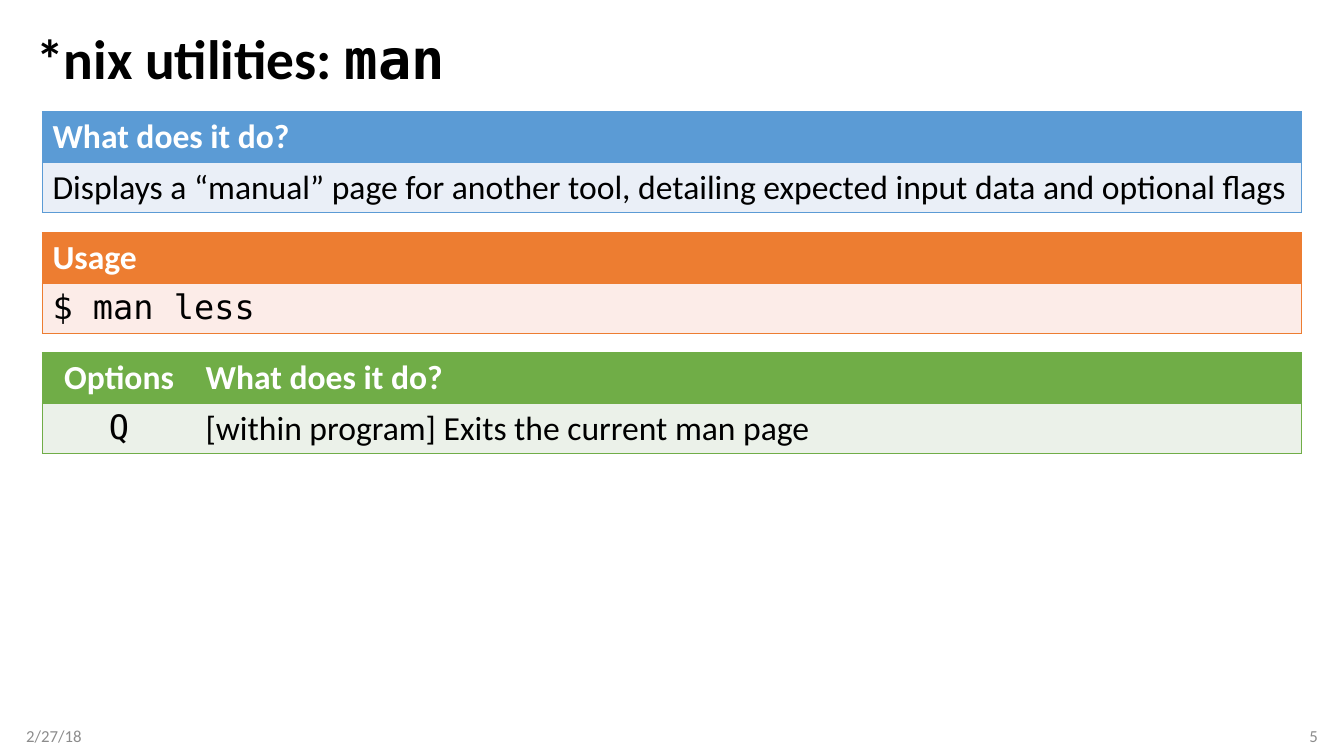
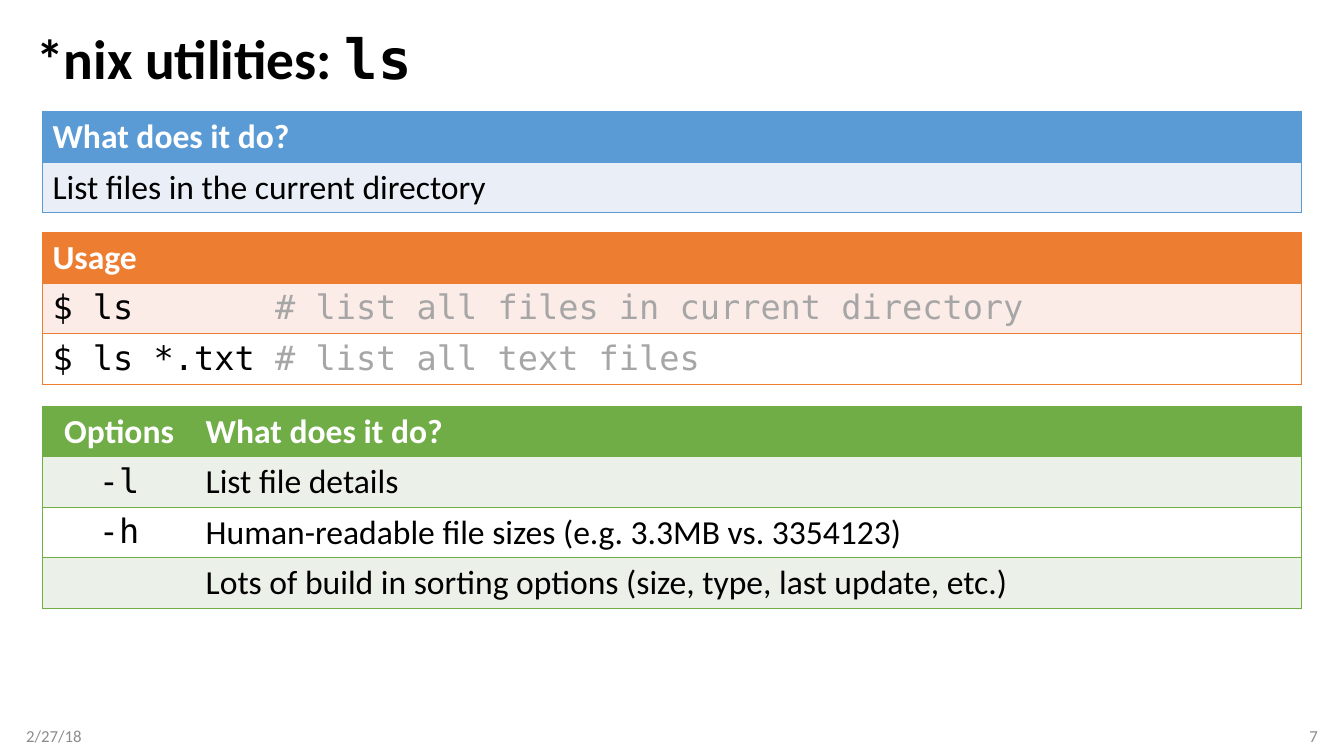
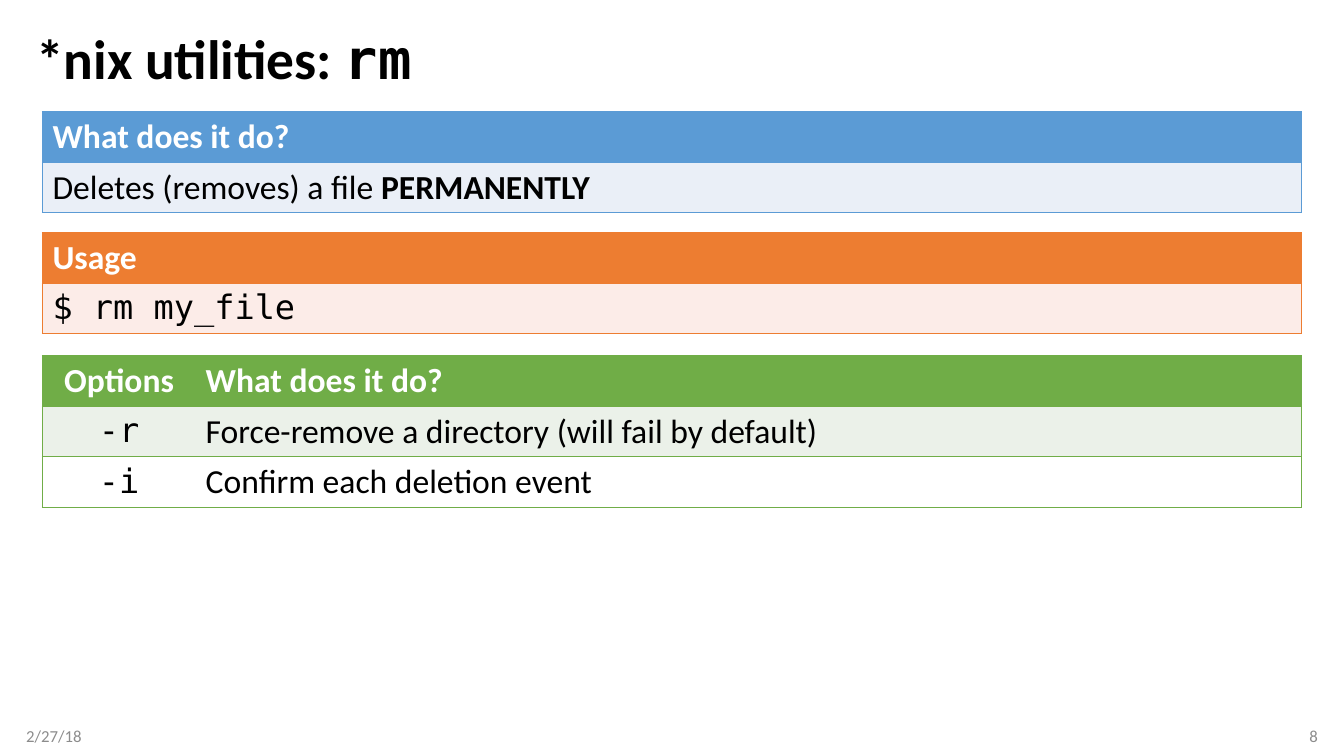
"""Build three slides that describe the *nix utilities man, ls and rm."""
from collections import namedtuple

from pptx import Presentation
from pptx.dml.color import RGBColor
from pptx.enum import text as t
from pptx.oxml import ns, xmlchemy
from pptx.util import Cm, Pt

BLACK = RGBColor(0x00, 0x00, 0x00)
WHITE = RGBColor(0xFF, 0xFF, 0xFF)
COMMENT_GRAY = RGBColor(0xA6, 0xA6, 0xA6)
FOOTER_GRAY = RGBColor(0x8C, 0x8C, 0x8C)
BLUE = RGBColor(0x5B, 0x9B, 0xD5)
BLUE_TINT = RGBColor(0xEA, 0xEF, 0xF7)
ORANGE = RGBColor(0xED, 0x7D, 0x31)
ORANGE_TINT = RGBColor(0xFC, 0xEC, 0xE8)
GREEN = RGBColor(0x70, 0xAD, 0x47)
GREEN_TINT = RGBColor(0xEB, 0xF1, 0xE9)

SANS = "Calibri"
MONO = "DejaVu Sans Mono"
DATE = "2/27/18"

SLIDE_WIDTH, SLIDE_HEIGHT = Cm(33.87), Cm(19.05)
EDGE = Cm(0.66)
TABLE_LEFT, TABLE_WIDTH = Cm(1.07), Cm(31.72)
OPTION_WIDTH = Cm(3.86)
ROW_HEIGHT = Cm(1.04)
PURPOSE_TOP, USAGE_TOP = Cm(2.82), Cm(5.87)
COMMENT_TAB = Cm(5.61)

Span = namedtuple("Span", "text bold color", defaults=(None, None))
Theme = namedtuple("Theme", "accent tint")
Utility = namedtuple("Utility", "number name purpose usage options options_top")

PURPOSE_THEME = Theme(BLUE, BLUE_TINT)
USAGE_THEME = Theme(ORANGE, ORANGE_TINT)
OPTIONS_THEME = Theme(GREEN, GREEN_TINT)

UTILITIES = [
    Utility(
        5, "man",
        [Span("Displays a “manual” page for another tool, "
              "detailing expected input data and optional flags")],
        [[Span("$ man less")]],
        [("Q", "[within program] Exits the current man page")],
        Cm(8.89),
    ),
    Utility(
        7, "ls",
        [Span("List files in the current directory")],
        [
            [Span("$ ls\t"),
             Span("# list all files in current directory", color=COMMENT_GRAY)],
            [Span("$ ls *.txt\t"),
             Span("# list all text files", color=COMMENT_GRAY)],
        ],
        [
            ("-l", "List file details"),
            ("-h", "Human-readable file sizes (e.g. 3.3MB vs. 3354123)"),
            ("", "Lots of build in sorting options (size, type, last update, etc.)"),
        ],
        Cm(10.24),
    ),
    Utility(
        8, "rm",
        [Span("Deletes (removes) a file "), Span("PERMANENTLY", bold=True)],
        [[Span("$ rm my_file")]],
        [
            ("-r", "Force-remove a directory (will fail by default)"),
            ("-i", "Confirm each deletion event"),
        ],
        Cm(8.97),
    ),
]


def set_font(font, size, color, name=SANS, bold=False):
    """Set every font property that the slides use."""
    font.size, font.name, font.bold = Pt(size), name, bold
    font.color.rgb = color


def add_child(parent, tag, **attributes):
    """Append a DrawingML element and return it."""
    child = xmlchemy.OxmlElement(tag)
    for key, value in attributes.items():
        child.set(key, str(value))
    parent.append(child)
    return child


def add_title(slide, name):
    """Fill the title, with the utility's name in the code font."""
    title = slide.shapes.title
    title.left, title.top = EDGE, Cm(0.64)
    title.width, title.height = SLIDE_WIDTH - 2 * EDGE, Cm(1.83)
    frame = title.text_frame
    frame.auto_size = t.MSO_AUTO_SIZE.NONE
    frame.vertical_anchor = t.MSO_ANCHOR.MIDDLE
    heading = frame.paragraphs[0]
    heading.alignment = t.PP_ALIGN.LEFT
    heading.line_spacing = 0.9
    set_font(heading.font, 39.6, BLACK, bold=True)
    heading.add_run().text = "*nix utilities: "
    command = heading.add_run()
    command.text = name
    command.font.name = MONO


def add_footer(slide, wording, left, alignment):
    """Add one footer text at the bottom of the slide."""
    footer = slide.shapes.add_textbox(left, Cm(18.03), Cm(7.62), Cm(1.02))
    frame = footer.text_frame
    frame.word_wrap = True
    frame.vertical_anchor = t.MSO_ANCHOR.MIDDLE
    if alignment == t.PP_ALIGN.LEFT:
        frame.margin_left = 0
    else:
        frame.margin_right = 0
    line = frame.paragraphs[0]
    line.text = wording
    line.alignment = alignment
    set_font(line.font, 12, FOOTER_GRAY)


def set_borders(cell, color, sides):
    """Draw the named sides of a cell and clear the others."""
    properties = cell._tc.get_or_add_tcPr()
    for side in "LRTB":
        border = add_child(properties, f"a:ln{side}", w=Pt(1))
        if side in sides:
            add_child(add_child(border, "a:solidFill"), "a:srgbClr", val=color)
        else:
            add_child(border, "a:noFill")


def write_cell(cell, spans, color, name, bold, alignment):
    """Write spans into a cell, overriding the font only where they differ."""
    line = cell.text_frame.paragraphs[0]
    line.alignment = alignment
    set_font(line.font, 24, color, name, bold)
    for span in spans:
        run = line.add_run()
        run.text = span.text
        if span.bold is not None:
            run.font.bold = span.bold
        if span.color is not None:
            run.font.color.rgb = span.color
    if any("\t" in span.text for span in spans):
        stops = xmlchemy.OxmlElement("a:tabLst")
        add_child(stops, "a:tab", pos=COMMENT_TAB, algn="l")
        line._p.find(ns.qn("a:pPr")).insert(0, stops)


def add_panel(slide, top, theme, rows, widths, fonts, alignments):
    """Add a table with an accent header and banded rows of spans."""
    table = slide.shapes.add_table(
        len(rows), len(widths), TABLE_LEFT, top, TABLE_WIDTH, ROW_HEIGHT * len(rows)
    ).table
    table.horz_banding = False
    last = len(widths) - 1
    for column, width in enumerate(widths):
        table.columns[column].width = width
    for row, contents in enumerate(rows):
        header = row == 0
        fill = theme.accent if header else theme.tint if row % 2 else WHITE
        for column, spans in enumerate(contents):
            cell = table.cell(row, column)
            sides = "TB" + "L" * (column == 0) + "R" * (column == last)
            set_borders(cell, theme.accent, sides)
            cell.fill.solid()
            cell.fill.fore_color.rgb = fill
            write_cell(cell, spans, WHITE if header else BLACK,
                       SANS if header else fonts[column], header, alignments[column])


def add_utility_slide(deck, utility):
    """Add the slide for one utility: purpose, usage and options."""
    slide = deck.slides.add_slide(deck.slide_layouts[5])
    left, center = t.PP_ALIGN.LEFT, t.PP_ALIGN.CENTER
    add_title(slide, utility.name)
    add_footer(slide, DATE, EDGE, left)
    add_footer(slide, str(utility.number), SLIDE_WIDTH - EDGE - Cm(7.62),
               t.PP_ALIGN.RIGHT)

    purpose = [[[Span("What does it do?")]], [utility.purpose]]
    add_panel(slide, PURPOSE_TOP, PURPOSE_THEME, purpose, [TABLE_WIDTH], [SANS], [left])

    usage = [[[Span("Usage")]]] + [[command] for command in utility.usage]
    add_panel(slide, USAGE_TOP, USAGE_THEME, usage, [TABLE_WIDTH], [MONO], [left])

    options = [
        [[Span(wording)] if wording else [] for wording in pair]
        for pair in [("Options", "What does it do?"), *utility.options]
    ]
    add_panel(slide, utility.options_top, OPTIONS_THEME, options,
              [OPTION_WIDTH, TABLE_WIDTH - OPTION_WIDTH], [MONO, SANS], [center, left])


def main():
    """Build and save the deck."""
    deck = Presentation()
    deck.slide_width, deck.slide_height = SLIDE_WIDTH, SLIDE_HEIGHT
    for utility in UTILITIES:
        add_utility_slide(deck, utility)
    deck.save("out.pptx")


if __name__ == "__main__":
    main()
